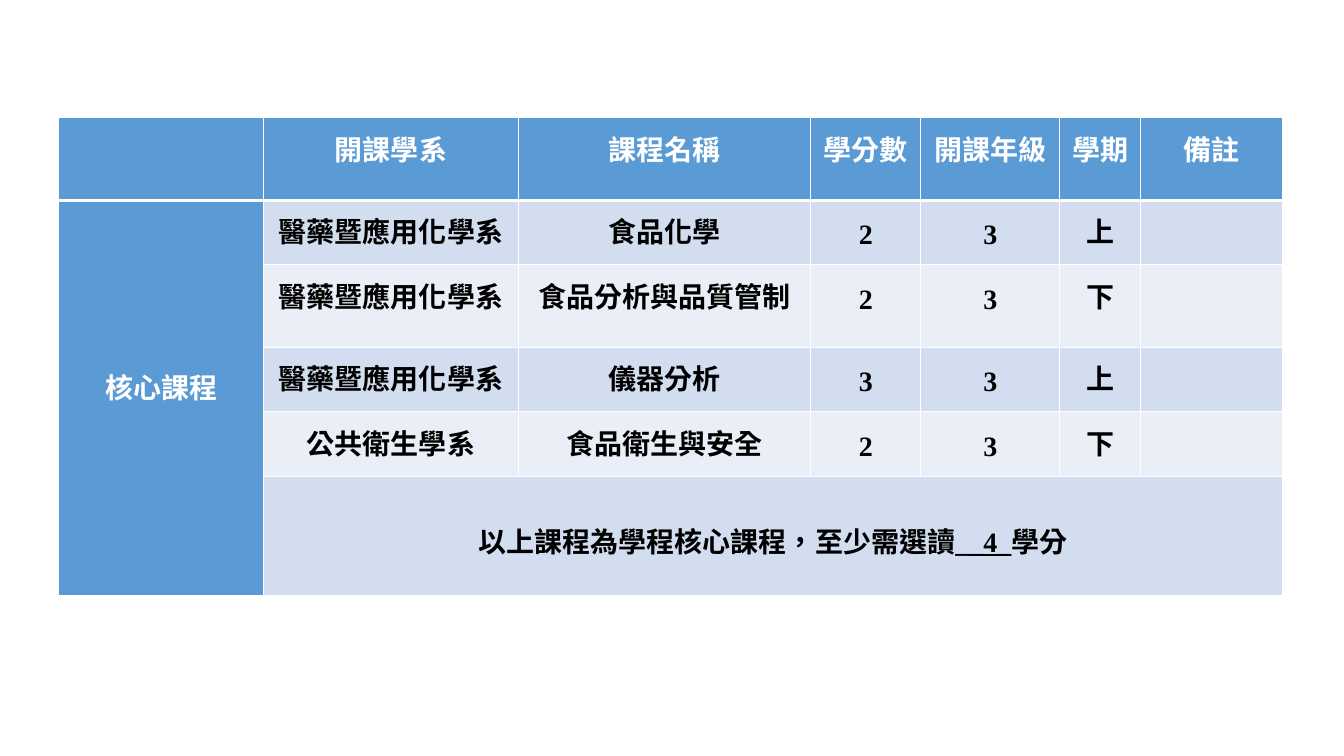
import pptx
import pptx.util
import pptx.dml.color
import pptx.enum.lang
import pptx.enum.text
import pptx.oxml
import pptx.oxml.ns

Pt = pptx.util.Pt
COLORS = {"header": "5B9BD5", "dark": "D2DEEF", "light": "EAEFF7",
          "white": "FFFFFF", "black": "000000"}
COL_WIDTHS = [146.2, 182.2, 208.8, 78.5, 99.4, 57.6, 101.5]
ROW_HEIGHTS = [59, 41, 59, 41, 41, 85]
HEADERS = ["", "開課學系", "課程名稱", "學分數", "開課年級", "學期", "備註"]
COURSES = [
    ["醫藥暨應用化學系", "食品化學", "2", "3", "上", ""],
    ["醫藥暨應用化學系", "食品分析與品質管制", "2", "3", "下", ""],
    ["醫藥暨應用化學系", "儀器分析", "3", "3", "上", ""],
    ["公共衛生學系", "食品衛生與安全", "2", "3", "下", ""],
]


def rgb(name):
    return pptx.dml.color.RGBColor.from_string(COLORS[name])


def add_run(p, text, color="black", underline=None):
    r = p.add_run()
    r.text = text
    r.font.name = "Times New Roman"
    r.font.size = Pt(20)
    r.font.bold = True
    r.font.underline = underline
    r.font.color.rgb = rgb(color)
    r.font.language_id = pptx.enum.lang.MSO_LANGUAGE_ID.TRADITIONAL_CHINESE


def set_text(cell, text, top=24, **fmt):
    cell.margin_left = cell.margin_right = Pt(4.9)
    cell.margin_top, cell.margin_bottom = Pt(top), Pt(0)
    p = cell.text_frame.paragraphs[0]
    p.alignment = pptx.enum.text.PP_ALIGN.CENTER
    p.line_spacing = Pt(12)
    if text:
        add_run(p, text, **fmt)
    return p


def set_borders(cell, top=1, bottom=1):
    tcPr = cell._tc.get_or_add_tcPr()
    sides = {"lnL": 1, "lnR": 1, "lnT": top, "lnB": bottom}
    for i, (tag, width) in enumerate(sides.items()):
        tcPr.insert(i, pptx.oxml.parse_xml(
            f'<a:{tag} {pptx.oxml.ns.nsdecls("a")} w="{Pt(width)}"><a:solidFill>'
            f'<a:srgbClr val="{COLORS["white"]}"/></a:solidFill></a:{tag}>'))


def set_fill(cell, color):
    cell.fill.solid()
    cell.fill.fore_color.rgb = rgb(color)


def add_course_table(s):
    rows, cols = len(ROW_HEIGHTS), len(COL_WIDTHS)
    table = s.shapes.add_table(rows, cols, Pt(42), Pt(84.2),
                               Pt(sum(COL_WIDTHS)), Pt(sum(ROW_HEIGHTS))).table
    for col, width in zip(table.columns, COL_WIDTHS):
        col.width = Pt(width)
    for row, height in zip(table.rows, ROW_HEIGHTS):
        row.height = Pt(height)
    for i in range(rows):
        for j in range(cols):
            cell = table.cell(i, j)
            band = "dark" if i % 2 else "light"
            set_fill(cell, "header" if i == 0 or j == 0 else band)
            set_borders(cell, top=3 if i == 1 else 1, bottom=3 if i == 0 else 1)
    return table


def fill_course_table(table):
    for j, text in enumerate(HEADERS):
        set_text(table.cell(0, j), text, color="white")
    for i, course in enumerate(COURSES, 1):
        for j, text in enumerate(course, 1):
            set_text(table.cell(i, j), text)

    core = table.cell(1, 0)
    core.merge(table.cell(5, 0))
    set_text(core, "核心課程", top=0, color="white")
    core.vertical_anchor = pptx.enum.text.MSO_ANCHOR.MIDDLE
    core._tc.get_or_add_tcPr().set("vert", "eaVert")

    total = table.cell(5, 1)
    total.merge(table.cell(5, 6))
    p = set_text(total, "以上課程為學程核心課程，至少需選讀_", top=48)
    add_run(p, "_4_", underline=True)
    add_run(p, "學分")


def main():
    prs = pptx.Presentation()
    prs.slide_width, prs.slide_height = Pt(960), Pt(540)
    s = prs.slides.add_slide(prs.slide_layouts[6])
    fill_course_table(add_course_table(s))
    prs.save("out.pptx")


if __name__ == "__main__":
    main()
